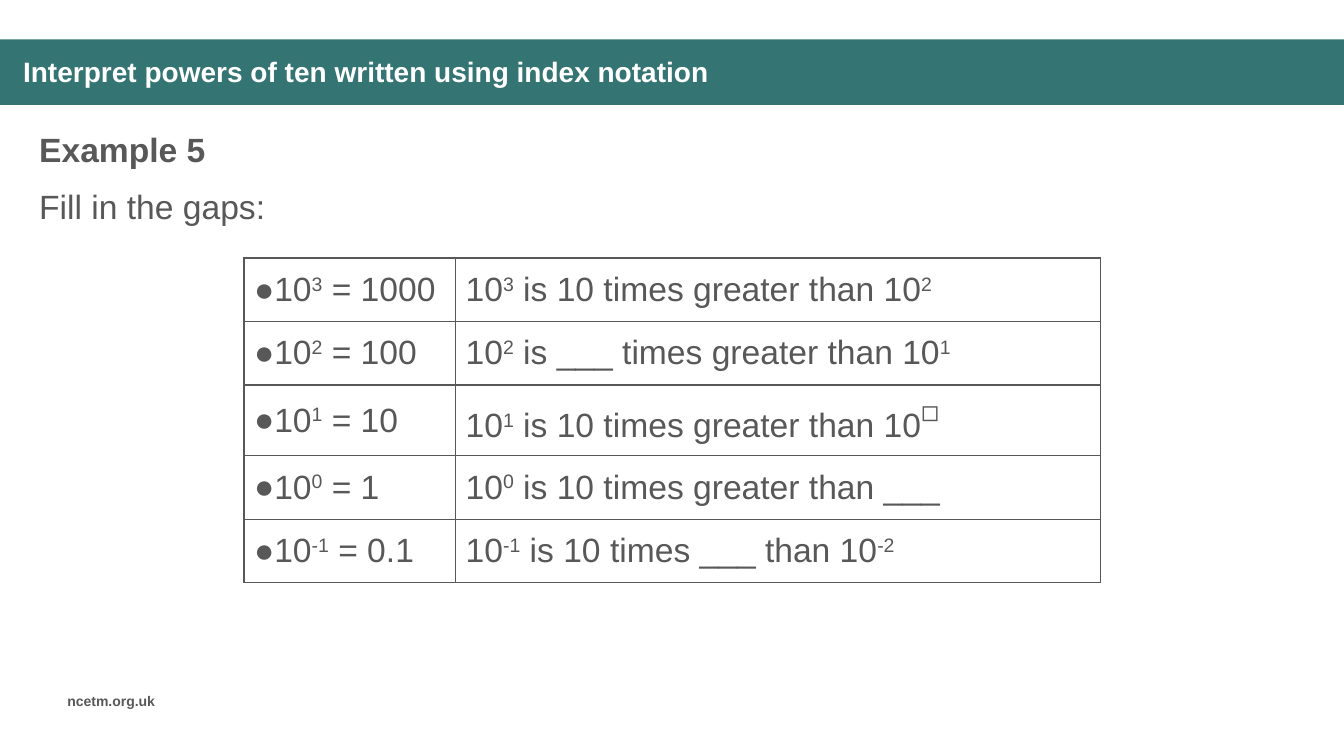
"""Build the slide on interpreting powers of ten written in index notation."""
from lxml import etree
from pptx import Presentation
from pptx.dml.color import RGBColor
from pptx.enum.shapes import MSO_SHAPE
from pptx.enum.text import MSO_ANCHOR, MSO_AUTO_SIZE
from pptx.oxml.ns import qn
from pptx.util import Inches, Pt

RECTANGLE = MSO_SHAPE.RECTANGLE
MIDDLE = MSO_ANCHOR.MIDDLE
GROW = MSO_AUTO_SIZE.SHAPE_TO_FIT_TEXT
COLORS = {"band": "347574", "title": "FFFFFF", "body": "585858"}
FONT = "Arial"
PLAIN_TABLE = "{2D5ABB26-0587-4C30-8999-92F81FD0307C}"

deck = Presentation()
deck.slide_width, deck.slide_height = Inches(13.33), Inches(7.5)
slide = deck.slides.add_slide(deck.slide_layouts[6])
COL, ROW = deck.slide_width / 100, deck.slide_height / 100


def place(left, top, width, height):
    """Turn columns and rows of a 100 by 100 grid into lengths."""
    return int(left * COL), int(top * ROW), int(width * COL), int(height * ROW)


def style(run, size, color="body", bold=False):
    """Format one run."""
    run.font.name, run.font.size, run.font.bold = FONT, Pt(size), bold
    run.font.color.rgb = RGBColor.from_string(COLORS[color])


band = slide.shapes.add_shape(RECTANGLE, *place(0, 5.2, 100, 8.67))
band.shadow.inherit = False
band.fill.solid()
band.fill.fore_color.rgb = RGBColor.from_string(COLORS["band"])
band.line.fill.background()

lines = [
    ("ncetm.org.uk", (4.28, 90.93, 9.08, 3.6), 10, "body", True),
    ("Interpret powers of ten written using index notation",
     (0.98, 6.53, 86.87, 6.27), 20, "title", True),
    ("Example 5", (2.18, 16.4, 49.96, 6.67), 24, "body", True),
    ("Fill in the gaps:", (2.18, 23.87, 96.85, 6.67), 24, "body", False),
]
for wording, spot, size, color, bold in lines:
    frame = slide.shapes.add_textbox(*place(*spot)).text_frame
    frame.word_wrap = True
    frame.text = wording
    style(frame.paragraphs[0].runs[0], size, color, bold)
    if color == "title":
        frame.vertical_anchor = MIDDLE
        frame.paragraphs[0].line_spacing = 0.9
    else:
        frame.auto_size = GROW

# Text between a pair of carets is superscript.
powers = [
    ("10^3^ = 1000", "10^3^ is 10 times greater than 10^2^"),
    ("10^2^ = 100", "10^2^ is ___ times greater than 10^1^"),
    ("10^1^ = 10", "10^1^ is 10 times greater than 10^◻^"),
    ("10^0^ = 1", "10^0^ is 10 times greater than ___"),
    ("10^-1^ = 0.1", "10^-1^ is 10 times ___ than 10^-2^"),
]
widths = (15.75, 48.01)
row_height = 8.4
table = slide.shapes.add_table(
    len(powers), len(widths),
    *place(18.15, 34.13, sum(widths), row_height * len(powers))).table
table.first_row = table.horz_banding = False
table._tbl.tblPr.find(qn("a:tableStyleId")).text = PLAIN_TABLE
for column, width in zip(table.columns, widths):
    column.width = int(width * COL)

for r, statements in enumerate(powers):
    table.rows[r].height = int(row_height * ROW)
    for c, statement in enumerate(statements):
        cell = table.cell(r, c)
        cell.vertical_anchor = MIDDLE
        cell.fill.background()
        paragraph = cell.text_frame.paragraphs[0]
        if c == 0:
            bullet = paragraph._p.get_or_add_pPr()
            bullet.set("marL", "0")
            bullet.set("indent", "0")
            etree.SubElement(bullet, qn("a:buFont")).set("typeface", FONT)
            etree.SubElement(bullet, qn("a:buChar")).set("char", "●")
        for i, part in enumerate(statement.split("^")):
            if part:
                run = paragraph.add_run()
                run.text = part
                style(run, 36 if part == "◻" else 24)
                if i % 2:
                    run._r.get_or_add_rPr().set("baseline", "30000")
        borders = cell._tc.get_or_add_tcPr()
        for i, side in enumerate(("lnL", "lnR", "lnT", "lnB")):
            border = etree.Element(qn("a:" + side), w=str(Pt(1)))
            ink = etree.SubElement(border, qn("a:solidFill"))
            etree.SubElement(ink, qn("a:srgbClr")).set("val", COLORS["body"])
            borders.insert(i, border)

deck.save("out.pptx")
